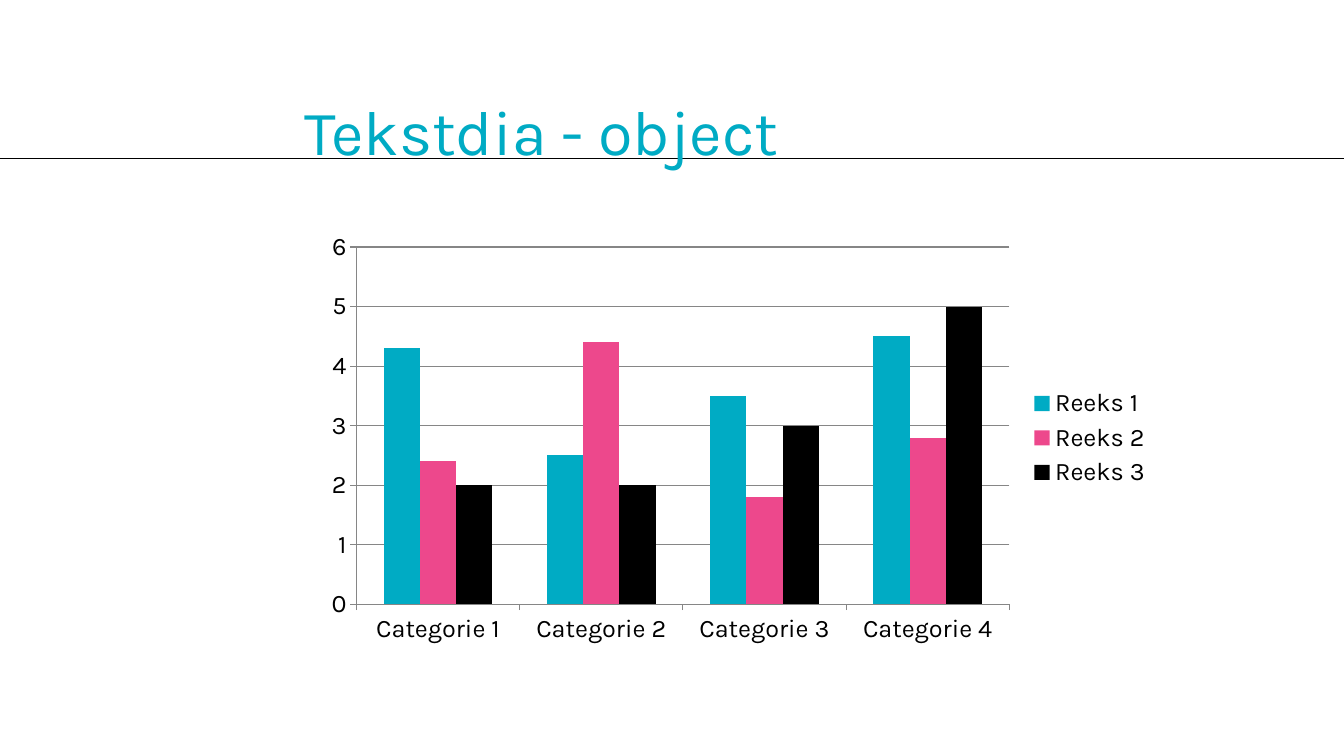
from lxml.etree import SubElement
from pptx import Presentation
from pptx.chart.data import CategoryChartData as Data
from pptx.dml.color import RGBColor
from pptx.enum.chart import XL_CHART_TYPE as Kind, XL_LEGEND_POSITION as Side, XL_TICK_MARK as Tick
from pptx.enum.shapes import MSO_CONNECTOR as Link
from pptx.enum.text import MSO_ANCHOR as Anchor, MSO_AUTO_SIZE as Auto, PP_ALIGN as Align
from pptx.oxml.ns import qn
from pptx.util import Inches, Pt

# Content
TITLE = "Tekstdia - object"
CATS = ["Categorie 1", "Categorie 2", "Categorie 3", "Categorie 4"]
SERIES = [
    ("Reeks 1", (4.3, 2.5, 3.5, 4.5), "00ABC4"),
    ("Reeks 2", (2.4, 4.4, 1.8, 2.8), "ED488C"),
    ("Reeks 3", (2, 2, 3, 5), "000000"),
]
FONT, TEAL, BLACK, GRAY = "Karla", "00ABC4", "000000", "868686"
WIDE, HIGH, RULE = 13.33, 7.5, 1.57
TITLE_BOX = (3.02, 0.94, 9.71, 0.71)
CHART_BOX = (3.12, 2.22, 8.4, 4.25)


def paint(color, code):
    color.rgb = RGBColor.from_string(code)


def style(font, size, code):
    font.name, font.size, font.bold = FONT, Pt(size), False
    paint(font.color, code)


def stroke(line, code, width):
    paint(line.color, code)
    line.width = Pt(width)


prs = Presentation()
prs.slide_width, prs.slide_height = Inches(WIDE), Inches(HIGH)
slide = prs.slides.add_slide(prs.slide_layouts[5])

# Rule across the slide, behind the title
rule = slide.shapes.add_connector(
    Link.STRAIGHT, 0, Inches(RULE), Inches(WIDE), Inches(RULE))
stroke(rule.line, BLACK, 0.7)
SubElement(rule._element.spPr, qn("a:effectLst"))
slide.shapes._spTree.insert(2, rule._element)

# Title
title = slide.shapes.title
title.left, title.top, title.width, title.height = map(Inches, TITLE_BOX)
frame = title.text_frame
frame.margin_left = frame.margin_right = frame.margin_top = frame.margin_bottom = 0
frame.vertical_anchor, frame.auto_size = Anchor.MIDDLE, Auto.NONE
para = frame.paragraphs[0]
para.alignment = Align.LEFT
run = para.add_run()
run.text = TITLE
style(run.font, 45, TEAL)

# Chart
data = Data()
data.categories = CATS
for name, vals, _ in SERIES:
    data.add_series(name, vals)
chart = slide.shapes.add_chart(
    Kind.COLUMN_CLUSTERED, *map(Inches, CHART_BOX), data).chart
chart.has_title = False
style(chart.font, 18, BLACK)

plot = chart.plots[0]
plot.gap_width, plot.overlap, plot.vary_by_categories = 150, 0, False
for bars, (_, _, code) in zip(plot.series, SERIES):
    bars.format.fill.solid()
    paint(bars.format.fill.fore_color, code)

# Axes and legend
for axis in (chart.category_axis, chart.value_axis):
    axis.major_tick_mark, axis.minor_tick_mark = Tick.OUTSIDE, Tick.NONE
    stroke(axis.format.line, GRAY, 0.75)
scale = chart.value_axis
scale.minimum_scale, scale.maximum_scale, scale.major_unit = 0, 6, 1
scale.has_major_gridlines = True
stroke(scale.major_gridlines.format.line, GRAY, 0.75)
chart.has_legend = True
chart.legend.position = Side.RIGHT
chart.legend.include_in_layout = False

prs.save("out.pptx")
